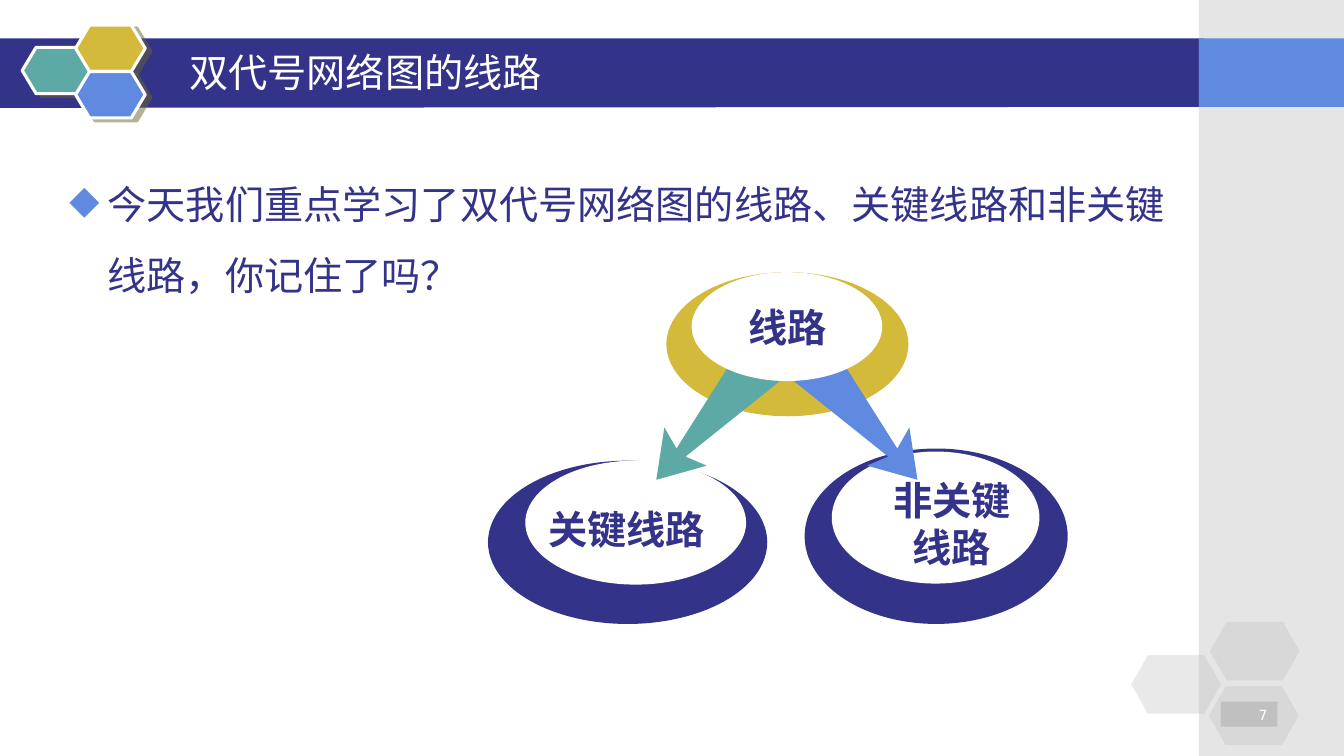
import pptx
import pptx.dml.color
import pptx.enum.shapes
import pptx.enum.text
import pptx.oxml
import pptx.oxml.ns
import pptx.util

# The slide is a grid of 133.3 columns by 75 rows.
COLUMNS, ROWS = 133.3, 75
WIDTH, HEIGHT = pptx.util.Inches(13.33), pptx.util.Inches(7.5)
FONT = "Noto Sans CJK SC"
COLORS = {
    "navy": "333389",
    "blue": "5F8ADF",
    "teal": "5DA9A5",
    "gold": "D4BA3A",
    "gray": "C0C0C0",
    "white": "FFFFFF",
    "shade": "666633",
}
PRESET = pptx.enum.shapes.MSO_SHAPE
ALIGN = pptx.enum.text.PP_ALIGN
ANCHOR = pptx.enum.text.MSO_ANCHOR


def rgb(color):
    return pptx.dml.color.RGBColor.from_string(COLORS[color])


def across(columns):
    return round(WIDTH * columns / COLUMNS)


def down(rows):
    return round(HEIGHT * rows / ROWS)


def cell(left, top, width, height):
    return across(left), down(top), across(width), down(height)


def add_xml(parent, tag, inner="", **attributes):
    listed = " ".join(f'{key}="{value}"' for key, value in attributes.items())
    namespace = pptx.oxml.ns.nsdecls("a")
    parent.append(pptx.oxml.parse_xml(f"<a:{tag} {namespace} {listed}>{inner}</a:{tag}>"))


def paint(shape, color, opacity=None):
    """Give a plain fill without outline or shadow; opacity is in percent."""
    shape.shadow.inherit = False
    shape.fill.solid()
    shape.fill.fore_color.rgb = rgb(color)
    shape.line.fill.background()
    if opacity:
        tint = shape._element.spPr.find(".//" + pptx.oxml.ns.qn("a:srgbClr"))
        add_xml(tint, "alpha", val=opacity * 1000)


def add_preset(slide, preset, area, color, opacity=None):
    shape = slide.shapes.add_shape(preset, *cell(*area))
    paint(shape, color, opacity)
    return shape


def add_outline(slide, corners, color):
    points = [(across(x), down(y)) for x, y in corners]
    builder = slide.shapes.build_freeform(*points[0], scale=1.0)
    builder.add_line_segments(points[1:], close=True)
    paint(builder.convert_to_shape(), color)


def add_hexagon(slide, area, color, slant, opacity=None):
    hexagon = add_preset(slide, PRESET.HEXAGON, area, color, opacity)
    hexagon.adjustments[0] = slant
    return hexagon


def add_emblem_hexagon(slide, left, top, color):
    """Draw a white-edged hexagon with a hard shadow."""
    hexagon = add_hexagon(slide, (left, top, 6.9, 4.6), color, 0.3)
    hexagon.line.color.rgb = rgb("white")
    hexagon.line.width = pptx.util.Pt(2.25)
    effects = hexagon._element.spPr.find(pptx.oxml.ns.qn("a:effectLst"))
    shade = f'<a:srgbClr val="{COLORS["shade"]}"><a:alpha val="50000"/></a:srgbClr>'
    add_xml(effects, "outerShdw", shade, blurRad=0, dist=pptx.util.Pt(4.5),
            dir=27 * 60000, algn="ctr", rotWithShape=0)


def write(frame, text, size=28, color="navy", font=FONT, bold=False,
          align=ALIGN.LEFT, anchor=ANCHOR.TOP):
    frame.word_wrap = True
    frame.vertical_anchor = anchor
    frame.text = text
    for paragraph in frame.paragraphs:
        paragraph.alignment = align
        for run in paragraph.runs:
            run.font.size = pptx.util.Pt(size)
            run.font.bold = bold
            run.font.name = font
            run.font.color.rgb = rgb(color)
            add_xml(run._r.get_or_add_rPr(), "ea", typeface=font)


def add_text(slide, area, text, **style):
    frame = slide.shapes.add_textbox(*cell(*area)).text_frame
    write(frame, text, **style)
    return frame


def add_bullet(paragraph):
    indent = across(3.8)
    properties = paragraph._p.get_or_add_pPr()
    properties.set("marL", str(indent))
    properties.set("indent", str(-indent))
    add_xml(properties, "buClr", f'<a:srgbClr val="{COLORS["blue"]}"/>')
    add_xml(properties, "buChar", char="◆")


def add_frame(slide):
    add_outline(slide, [(-0.1, 3.8), (119.4, 3.8), (119.3, 10.6), (-0.1, 10.7)], "navy")
    add_preset(slide, PRESET.RECTANGLE, (118.9, 0, 14.4, ROWS), "gray", 40)
    add_preset(slide, PRESET.RECTANGLE, (118.9, 3.8, 14.4, 6.8), "blue")
    for left, top, color in [(2.2, 4.7, "teal"), (7.5, 2.5, "gold"), (7.5, 7.1, "blue")]:
        add_emblem_hexagon(slide, left, top, color)
    for left, top in [(112.2, 65), (120, 61.7), (119.9, 68.1)]:
        add_hexagon(slide, (left, top, 8.9, 5.8), "gray", 0.286, 35)


def add_ring(slide, outer, inner, color):
    add_preset(slide, PRESET.OVAL, outer, color)
    add_preset(slide, PRESET.OVAL, inner, "white")


def add_route_diagram(slide):
    label = {"bold": True, "align": ALIGN.CENTER}
    add_ring(slide, (48.4, 45.7, 27.7, 16.2), (52.1, 45.7, 21.9, 12.3), "navy")
    add_text(slide, (53.4, 49.6, 18.6, 5.7), "关键线路", bold=True)
    add_ring(slide, (79.8, 44.5, 26.1, 17.4), (82.5, 44.8, 20.6, 13.1), "navy")
    add_text(slide, (86.4, 46.8, 16, 10.4), "非关键\n线路", **label)

    add_preset(slide, PRESET.OVAL, (66.1, 27, 24, 14.3), "gold")
    right_arrow = [(81.8, 33.1), (89, 44.5), (90.2, 42.4), (91, 47.6),
                   (86, 46.2), (88.1, 45.3), (77.6, 36.9)]
    left_arrow = [(156.1 - x, y) for x, y in right_arrow]
    add_outline(slide, right_arrow, "blue")
    add_outline(slide, left_arrow, "teal")
    add_preset(slide, PRESET.OVAL, (68.6, 27, 18.9, 10.8), "white")
    add_text(slide, (70.2, 29.6, 15.8, 5.7), "线路", **label)


def main():
    deck = pptx.Presentation()
    deck.slide_width, deck.slide_height = WIDTH, HEIGHT
    slide = deck.slides.add_slide(deck.slide_layouts[6])

    add_frame(slide)
    add_text(slide, (17.8, 4.2, 96.7, 5.8), "双代号网络图的线路",
             color="white", anchor=ANCHOR.MIDDLE)
    summary = add_text(slide, (5.9, 15.1, 112.4, 53.5),
                       "今天我们重点学习了双代号网络图的线路、关键线路和非关键线路，你记住了吗？")
    question = summary.paragraphs[0]
    question.line_spacing = 1.5
    question.space_before = pptx.util.Pt(5.6)
    add_bullet(question)

    page_number = add_preset(slide, PRESET.RECTANGLE, (121.1, 69.6, 5.6, 2.5), "gray")
    write(page_number.text_frame, "7", size=10, color="white", font="DejaVu Sans",
          align=ALIGN.RIGHT)
    add_route_diagram(slide)
    deck.save("out.pptx")


if __name__ == "__main__":
    main()
